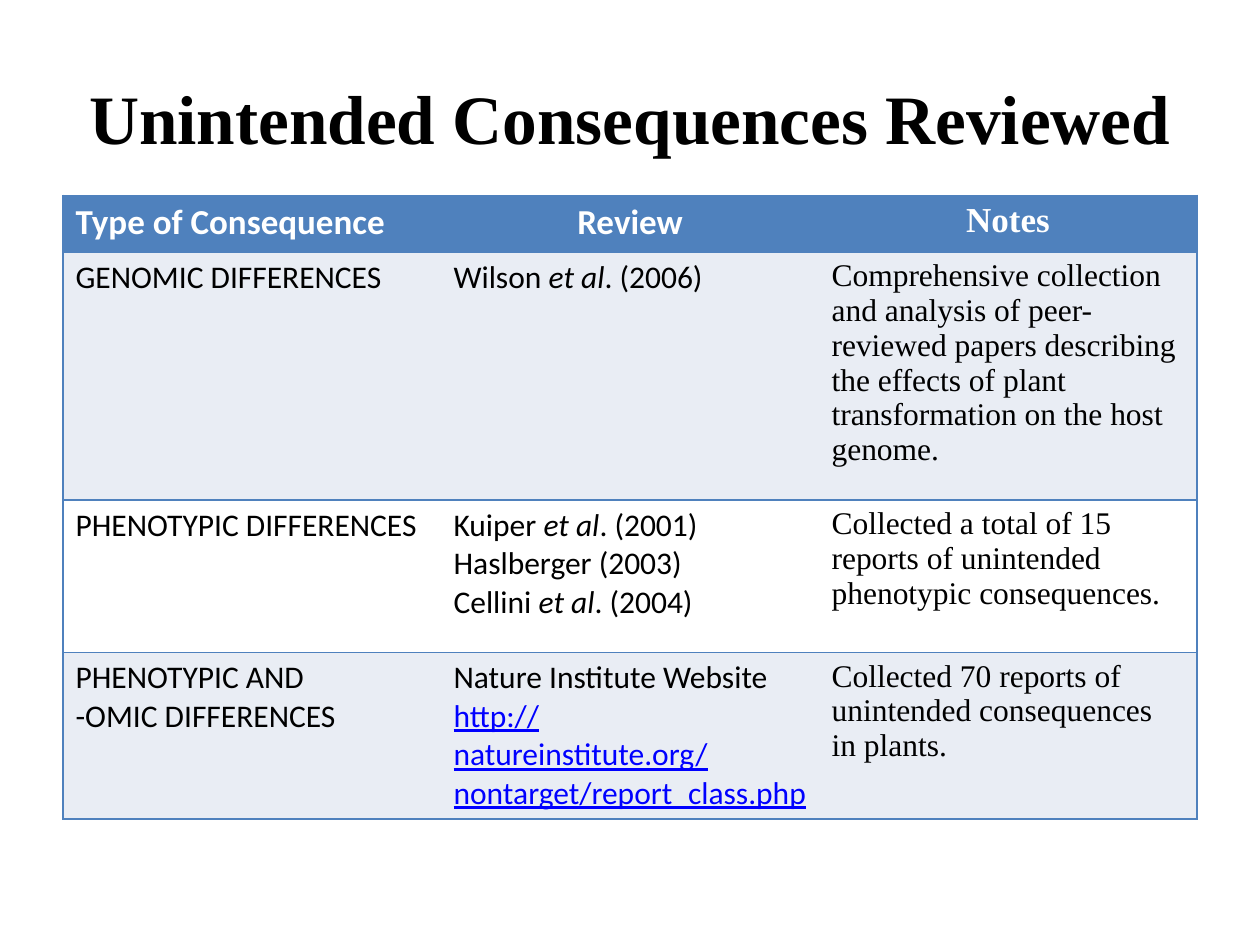
from lxml import etree
from pptx import Presentation
from pptx.dml.color import RGBColor
from pptx.enum import text as t
from pptx.oxml.ns import qn
from pptx.util import Inches, Pt

BLUE = RGBColor(0x4F, 0x81, 0xBD)
PALE = RGBColor(0xE9, 0xED, 0xF4)
WHITE = RGBColor(0xFF, 0xFF, 0xFF)
BLACK = RGBColor(0, 0, 0)
LINK = RGBColor(0, 0, 0xFF)
SERIF = "Times New Roman"

ROWS = [
    ["Type of Consequence", "Review", "Notes"],
    ["GENOMIC DIFFERENCES", "Wilson et al. (2006)",
     "Comprehensive collection and analysis of peer-reviewed papers "
     "describing the effects of plant transformation on the host genome."],
    ["PHENOTYPIC DIFFERENCES",
     "Kuiper et al. (2001)\nHaslberger (2003)\nCellini et al. (2004)",
     "Collected a total of 15 reports of unintended phenotypic consequences."],
    ["PHENOTYPIC AND\n-OMIC DIFFERENCES",
     "Nature Institute Website\n"
     "http://natureinstitute.org/nontarget/report_class.php",
     "Collected 70 reports of unintended consequences in plants."],
]
HIGH = [0.45, 1.97, 1.21, 1.27]
FILLS = [BLUE, PALE, WHITE, PALE]


def style(font, name, size, color, bold):
    font.name, font.size, font.bold = name, Pt(size), bold
    font.color.rgb = color


def border(cell, side, shown):
    line = etree.SubElement(cell._tc.get_or_add_tcPr(), qn("a:ln" + side))
    if shown:
        line.set("w", str(Pt(1)))
        fill = etree.SubElement(line, qn("a:solidFill"))
        etree.SubElement(fill, qn("a:srgbClr")).set("val", str(BLUE))
    else:
        etree.SubElement(line, qn("a:noFill"))


deck = Presentation()
deck.slide_width, deck.slide_height = Inches(10), Inches(7.5)
slide = deck.slides.add_slide(deck.slide_layouts[5])

title = slide.shapes.title
title.left, title.top = Inches(0.5), Inches(0.3)
title.width, title.height = Inches(9), Inches(1.25)
frame = title.text_frame
frame.text = "Unintended Consequences Reviewed"
frame.vertical_anchor = t.MSO_ANCHOR.MIDDLE
frame.paragraphs[0].alignment = t.PP_ALIGN.CENTER
style(frame.paragraphs[0].runs[0].font, SERIF, 39.6, BLACK, True)

table = slide.shapes.add_table(
    4, 3, Inches(0.5), Inches(1.55), Inches(9), Inches(sum(HIGH))).table
for col in table.columns:
    col.width = Inches(3)

for r, row in enumerate(ROWS):
    table.rows[r].height = Inches(HIGH[r])
    head = r == 0
    for c, words in enumerate(row):
        cell = table.cell(r, c)
        for side, shown in (("L", c == 0), ("R", c == 2), ("T", True), ("B", True)):
            border(cell, side, shown)
        cell.fill.solid()
        cell.fill.fore_color.rgb = FILLS[r]
        for n, line in enumerate(words.split("\n")):
            para = cell.text_frame.add_paragraph() if n else cell.text_frame.paragraphs[0]
            para.alignment = t.PP_ALIGN.CENTER if head and c else t.PP_ALIGN.LEFT
            link = line.startswith("http")
            color = WHITE if head else LINK if link else BLACK
            before, latin, after = line.partition("et al")
            for part in filter(None, (before, latin, after)):
                run = para.add_run()
                run.text = part
                style(run.font, SERIF if c == 2 else "Calibri",
                      20 if head else 18, color, head)
                run.font.italic = part == "et al"
                run.font.underline = link

deck.save("out.pptx")
